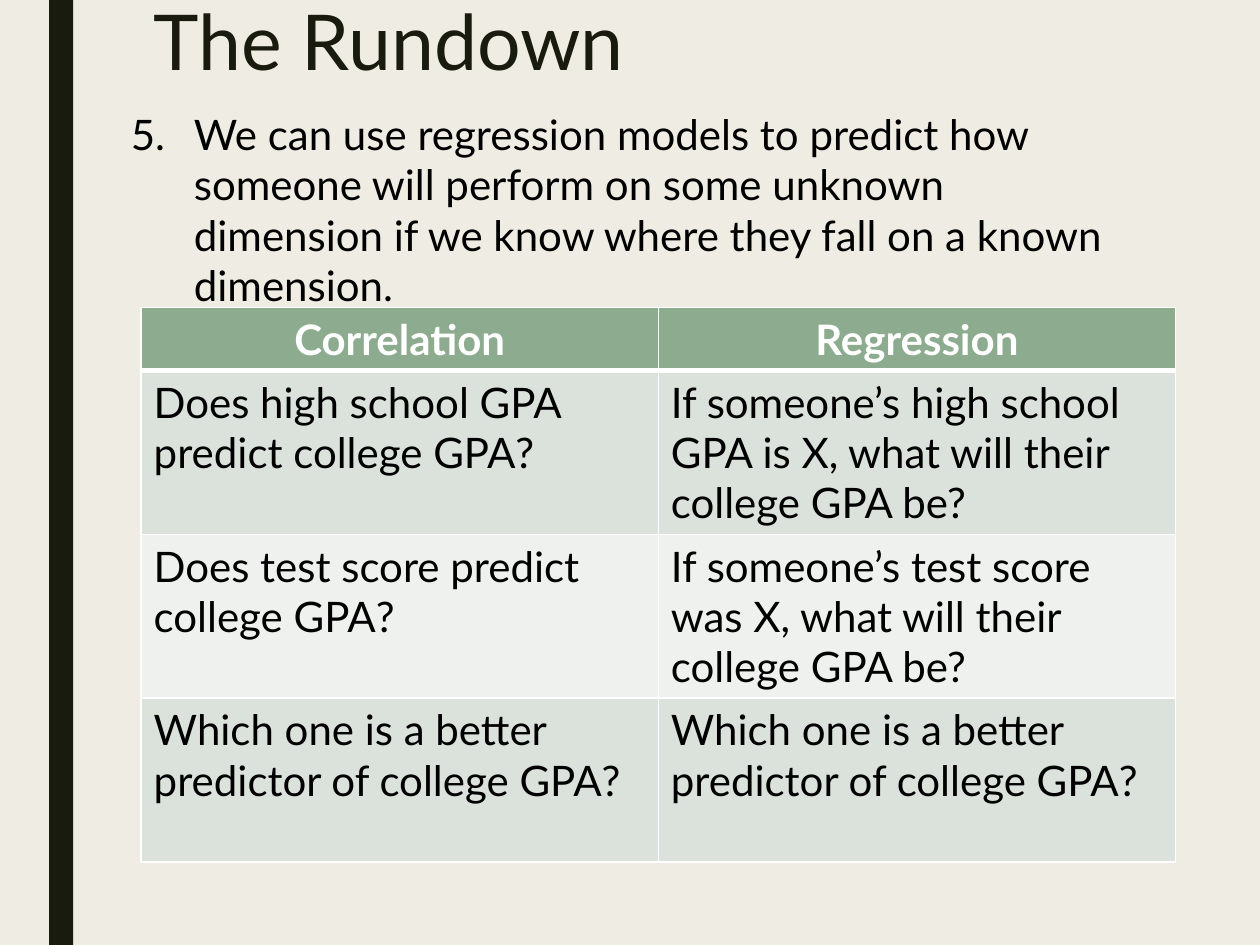
from dataclasses import dataclass

from pptx import Presentation
from pptx.dml.color import RGBColor
from pptx.enum.shapes import MSO_SHAPE
from pptx.enum.text import MSO_ANCHOR, PP_ALIGN
from pptx.oxml.ns import qn
from pptx.util import Inches, Pt
from lxml.etree import SubElement


@dataclass(frozen=True)
class Theme:
    """Colours, font and type sizes of the slide."""
    background: str = "EFEDE3"
    dark: str = "191B0E"
    text: str = "000000"
    white: str = "FFFFFF"
    header: str = "8DAB8E"
    bands: tuple = ("DBE2DB", "EEF1EE")
    font: str = "Lato"
    title_size: int = 44
    body_size: int = 24


THEME = Theme()
ROWS = [
    ("Correlation", "Regression"),
    ("Does high school GPA predict college GPA?",
     "If someone’s high school GPA is X, what will their college GPA be?"),
    ("Does test score predict college GPA?",
     "If someone’s test score was X, what will their college GPA be?"),
    ("Which one is a better predictor of college GPA?",) * 2,
]
POINT = ("We can use regression models to predict how someone will perform on "
         "some unknown dimension if we know where they fall on a known dimension.")


def paint(fill, color):
    """Give a fill one solid colour."""
    fill.solid()
    fill.fore_color.rgb = RGBColor.from_string(color)


def write(tf, text, size=THEME.body_size, color=THEME.text, bold=False,
          align=PP_ALIGN.LEFT, spacing=None):
    """Write one formatted paragraph and return it."""
    tf.word_wrap = True
    p = tf.paragraphs[0]
    p.alignment = align
    p.line_spacing = spacing
    r = p.add_run()
    r.text = text
    r.font.name = THEME.font
    r.font.size = Pt(size)
    r.font.bold = bold
    r.font.color.rgb = RGBColor.from_string(color)
    return p


def number_from(p, start, indent):
    """Number a paragraph with a hanging indent."""
    pPr = p._p.get_or_add_pPr()
    pPr.set("marL", str(indent))
    pPr.set("indent", str(-indent))
    SubElement(pPr, qn("a:buFont"), typeface="+mj-lt")
    SubElement(pPr, qn("a:buAutoNum"), type="arabicPeriod", startAt=str(start))


def set_borders(cell, **widths):
    """Draw white borders of the given point widths on a cell."""
    tcPr = cell._tc.get_or_add_tcPr()
    for index, (side, width) in enumerate(widths.items()):
        ln = tcPr.makeelement(qn(f"a:ln{side}"), {"w": str(Pt(width))})
        fill = SubElement(ln, qn("a:solidFill"))
        SubElement(fill, qn("a:srgbClr"), val=THEME.white)
        tcPr.insert(index, ln)


def add_side_bar(s, x, y, w, h):
    """Add the dark vertical bar."""
    sp = s.shapes.add_shape(MSO_SHAPE.RECTANGLE, x, y, w, h)
    sp.shadow.inherit = False
    paint(sp.fill, THEME.dark)
    sp.line.fill.background()


def add_title(s, x, y, w, h):
    """Add the slide title."""
    tf = s.shapes.add_textbox(x, y, w, h).text_frame
    tf.vertical_anchor = MSO_ANCHOR.TOP
    write(tf, "The Rundown", size=THEME.title_size, color=THEME.dark, spacing=0.89)


def add_comparison(s, x, y, w, h):
    """Add the table that sets correlation against regression."""
    table = s.shapes.add_table(len(ROWS), len(ROWS[0]), x, y, w, h).table
    header_h = Inches(0.5)
    for row in table.rows:
        row.height = (h - header_h) // (len(ROWS) - 1)
    table.rows[0].height = header_h
    for i, texts in enumerate(ROWS):
        for j, text in enumerate(texts):
            cell = table.cell(i, j)
            if i == 0:
                paint(cell.fill, THEME.header)
                write(cell.text_frame, text, color=THEME.white, bold=True,
                      align=PP_ALIGN.CENTER)
            else:
                paint(cell.fill, THEME.bands[(i - 1) % 2])
                write(cell.text_frame, text)
            set_borders(cell, L=1, R=1, T=3 if i == 1 else 1, B=3 if i == 0 else 1)


def add_point(s, x, y, w, h):
    """Add the numbered point under the title."""
    tf = s.shapes.add_textbox(x, y, w, h).text_frame
    number_from(write(tf, POINT), start=5, indent=Inches(0.5))


def main():
    """Build and save the slide."""
    prs = Presentation()
    prs.slide_width, prs.slide_height = Inches(10), Inches(7.5)
    s = prs.slides.add_slide(prs.slide_layouts[6])
    paint(s.background.fill, THEME.background)
    add_side_bar(s, Inches(0.39), 0, Inches(0.19), prs.slide_height)
    add_title(s, Inches(1.12), Inches(-0.01), Inches(7.88), Inches(1.62))
    add_comparison(s, Inches(1.12), Inches(2.44), Inches(8.21), Inches(4.4))
    add_point(s, Inches(0.94), Inches(0.81), Inches(8.12), Inches(2.12))
    prs.save("out.pptx")


if __name__ == "__main__":
    main()
